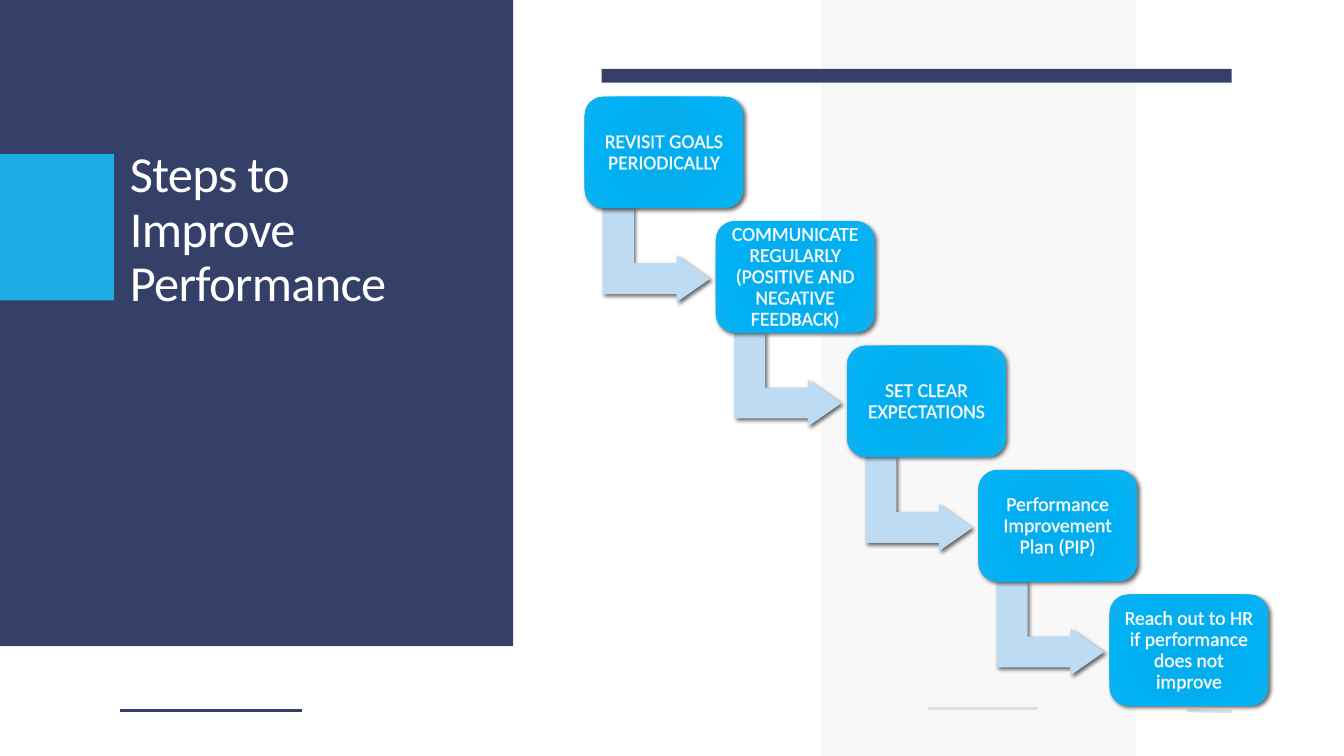
from lxml import etree
from pptx import Presentation
from pptx.dml.color import RGBColor
from pptx.enum.shapes import MSO_CONNECTOR as Connector, MSO_SHAPE as Shape
from pptx.enum.text import MSO_ANCHOR as Anchor, PP_ALIGN as Align
from pptx.oxml import parse_xml
from pptx.oxml.ns import qn
from pptx.util import Pt

NS = 'xmlns:a="http://schemas.openxmlformats.org/drawingml/2006/main"'
NAVY, CYAN, WHITE = "344068", "1CADE4", "FFFFFF"
BAND, RULE, ARROW, OUTLINE = "F2F2F2", "D9E0E6", "BDDBF2", "D2EFFA"
GLOW = [(0, "00ADEF"), (34, "03ADEE"), (70, "00B1F5"), (100, "12B1EE")]


def color(value):
    return RGBColor.from_string(value)


def write(shape, text, size, align=Align.LEFT, anchor=Anchor.MIDDLE,
          inset=(7.2, 3.6), spacing=None, outline=None):
    frame = shape.text_frame
    frame.word_wrap = True
    frame.vertical_anchor = anchor
    frame.margin_left = frame.margin_right = Pt(inset[0])
    frame.margin_top = frame.margin_bottom = Pt(inset[1])
    paragraph = frame.paragraphs[0]
    paragraph.alignment = align
    paragraph.line_spacing = 0.9
    run = paragraph.add_run()
    run.text = text
    run.font.name = "Calibri"
    run.font.size = Pt(size)
    run.font.color.rgb = color(WHITE)
    properties = run.font._element
    if spacing:
        properties.set("spc", str(round(spacing * 100)))
    if outline:
        properties.insert(0, parse_xml(
            f'<a:ln {NS} w="{Pt(0.75)}"><a:solidFill><a:srgbClr val="{outline}"/>'
            '</a:solidFill></a:ln>'))


class SlideBuilder:
    def __init__(self, slide):
        self.slide = slide

    def block(self, kind, left, top, width, height, fill, opacity=None):
        shape = self.slide.shapes.add_shape(kind, Pt(left), Pt(top), Pt(width), Pt(height))
        shape.shadow.inherit = False
        shape.line.fill.background()
        shape.fill.solid()
        shape.fill.fore_color.rgb = color(fill)
        if opacity:
            tint = shape._element.spPr.find(".//" + qn("a:srgbClr"))
            etree.SubElement(tint, qn("a:alpha")).set("val", str(opacity * 1000))
        return shape

    def band(self):
        shape = self.block(Shape.PARALLELOGRAM, 586.8, 0, 224.6, 540, BAND, opacity=30)
        shape.adjustments[0] = 0

    def rule(self, start, end, stroke):
        line = self.slide.shapes.add_connector(
            Connector.STRAIGHT, *[Pt(value) for value in (*start, *end)])
        line.line.color.rgb = color(stroke)
        line.line.width = Pt(2.25)
        etree.SubElement(line._element.spPr, qn("a:effectLst"))

    def title(self, text, left, top, width, height):
        box = self.slide.shapes.add_textbox(Pt(left), Pt(top), Pt(width), Pt(height))
        write(box, text, 36, anchor=Anchor.BOTTOM, spacing=-0.5)

    def cast_shadow(self, shape):
        effects = shape._element.spPr.find(qn("a:effectLst"))
        effects.append(parse_xml(
            f'<a:outerShdw {NS} blurRad="{Pt(3)}" dist="{Pt(2)}" dir="2700000" '
            'algn="tl" rotWithShape="0"><a:srgbClr val="000000">'
            '<a:alpha val="60000"/></a:srgbClr></a:outerShdw>'))

    def step(self, text, left, top):
        shape = self.block(Shape.ROUNDED_RECTANGLE, left, top, 113.3, 79.3, CYAN)
        shape.adjustments[0] = 0.167
        stops = "".join(f'<a:gs pos="{place * 1000}"><a:srgbClr val="{tint}"/></a:gs>'
                        for place, tint in GLOW)
        solid = shape._element.spPr.find(qn("a:solidFill"))
        solid.getparent().replace(solid, parse_xml(
            f'<a:gradFill {NS} rotWithShape="1"><a:gsLst>{stops}</a:gsLst>'
            '<a:path path="circle"><a:fillToRect l="100000" t="100000" r="100000" '
            'b="100000"/></a:path></a:gradFill>'))
        self.cast_shadow(shape)
        write(shape, text, 14, align=Align.CENTER, inset=(4.2, 4.2), outline=OUTLINE)

    def bent_arrow(self, left, top):
        shape = self.block(Shape.BENT_UP_ARROW, left, top, 67.3, 76.6, ARROW)
        shape.rotation = 90
        for index, value in enumerate((0.328, 0.25, 0.358)):
            shape.adjustments[index] = value
        self.cast_shadow(shape)


def main():
    presentation = Presentation()
    presentation.slide_width, presentation.slide_height = Pt(960), Pt(540)
    builder = SlideBuilder(presentation.slides.add_slide(presentation.slide_layouts[6]))

    # Background panels and bars
    builder.band()
    builder.block(Shape.RECTANGLE, 0, 0, 366.5, 461.5, NAVY)
    builder.band()
    builder.block(Shape.RECTANGLE, 0, 110, 81.4, 104.5, CYAN)
    builder.block(Shape.RECTANGLE, 429.8, 49.2, 450, 9.8, NAVY)

    # Footer rules
    builder.rule((215.5, 507.4), (85.7, 507.4), NAVY)
    builder.rule((741.4, 506), (663, 506), RULE)
    builder.rule((880, 508.3), (847.6, 507.6), RULE)

    # Title
    builder.title("Steps to Improve Performance", 85.7, 62, 242, 164.9)

    # Descending steps, each arrow behind its box
    steps = ["REVISIT GOALS PERIODICALLY",
             "COMMUNICATE REGULARLY (POSITIVE AND NEGATIVE FEEDBACK)",
             "SET CLEAR EXPECTATIONS",
             "Performance Improvement Plan (PIP)",
             "Reach out to HR if performance does not improve"]
    for index, text in enumerate(steps):
        left, top = 417.6 + index * 93.75, 69.2 + index * 88.9
        if index < len(steps) - 1:
            builder.bent_arrow(left + 17.8, top + 74.7)
        builder.step(text, left, top)

    presentation.save("out.pptx")


if __name__ == "__main__":
    main()
